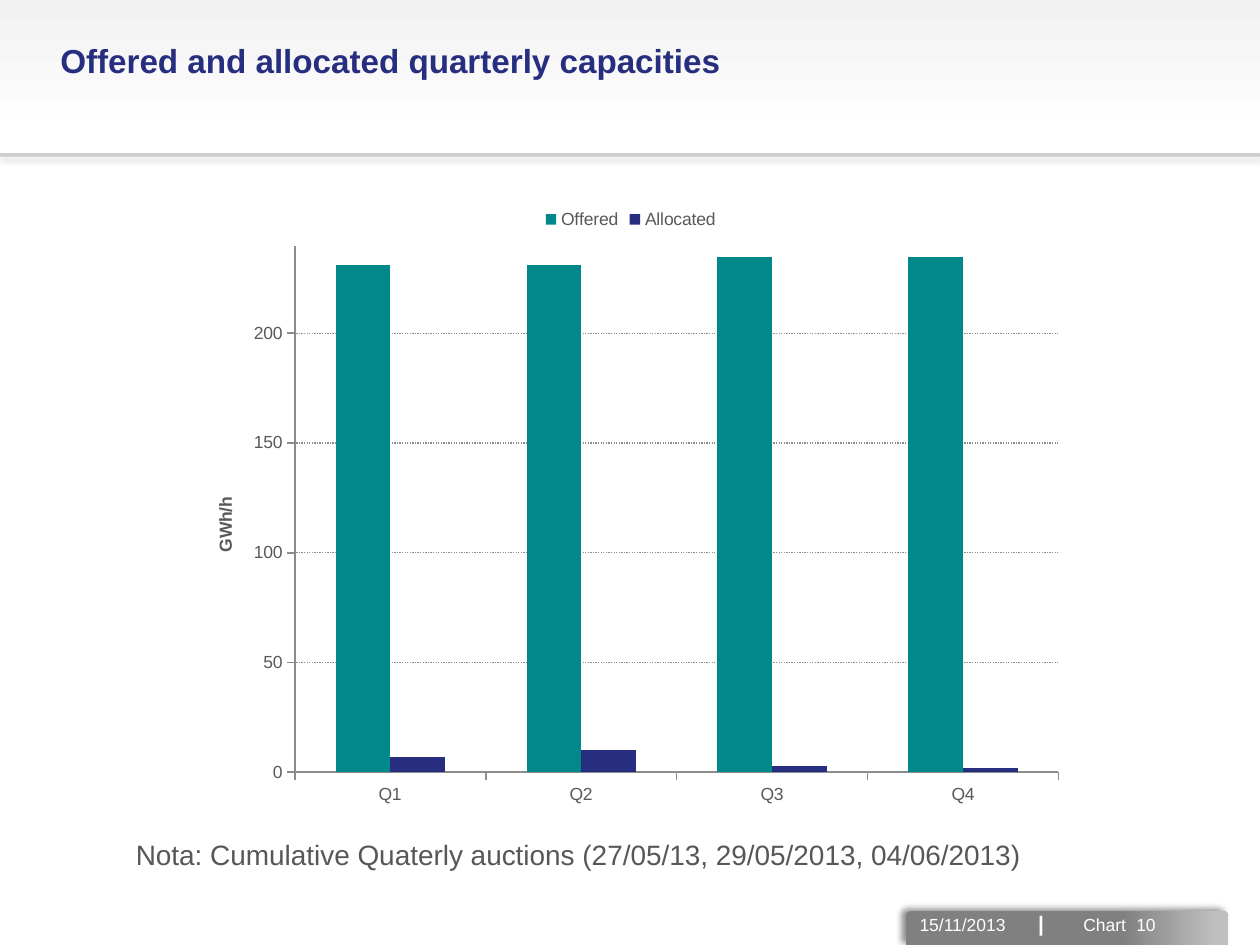
import pptx
import pptx.chart.data
import pptx.dml.color
import pptx.enum.chart
import pptx.enum.dml
import pptx.enum.shapes
import pptx.enum.text
import pptx.oxml
import pptx.oxml.ns
import pptx.util

Inches = pptx.util.Inches
Pt = pptx.util.Pt
RGBColor = pptx.dml.color.RGBColor
XL = pptx.enum.chart

WHITE = RGBColor(0xFF, 0xFF, 0xFF)
PALE = RGBColor(0xF2, 0xF2, 0xF2)
SILVER = RGBColor(0xBF, 0xBF, 0xBF)
GRAY = RGBColor(0x80, 0x80, 0x80)
AXIS = RGBColor(0x8C, 0x8C, 0x8C)
LABEL = RGBColor(0x59, 0x59, 0x59)
NOTE = RGBColor(0x57, 0x57, 0x56)
NAVY = RGBColor(0x27, 0x2E, 0x80)
TEAL = RGBColor(0x00, 0x88, 0x8A)

TITLE_STYLE = {"name": "Arial", "size": Pt(19), "bold": True}
NOTE_STYLE = {"name": "Arial", "size": Pt(16), "bold": False}
CHART_STYLE = {"name": "Arial", "size": Pt(10), "bold": False}
FOOTER_STYLE = {"name": "Arial", "size": Pt(10), "bold": False}
DIVIDER_STYLE = {"name": "Arial", "size": Pt(12), "bold": True}


def set_font(font, style, color):
    for key, value in style.items():
        setattr(font, key, value)
    font.color.rgb = color


def xml(tag, attrs="", inner=""):
    ns = pptx.oxml.ns.nsdecls("a", "c")
    return pptx.oxml.parse_xml(f"<{tag} {ns} {attrs}>{inner}</{tag}>")


def set_gradient(fill, angle, stops):
    fill.gradient()
    fill.gradient_angle = angle
    for stop, (position, color) in zip(fill.gradient_stops, stops):
        stop.position = position
        stop.color.rgb = color


def add_shadow(shape, alpha, blur, distance, angle):
    color = f'<a:srgbClr val="000000"><a:alpha val="{alpha * 1000}"/></a:srgbClr>'
    attrs = (f'blurRad="{Pt(blur)}" dist="{Pt(distance)}" '
             f'dir="{angle * 60000}" rotWithShape="0"')
    outer = f"<a:outerShdw {attrs}>{color}</a:outerShdw>"
    shape._element.spPr.append(xml("a:effectLst", inner=outer))


def add_text(s, box, runs, color):
    tf = s.shapes.add_textbox(*map(Inches, box)).text_frame
    tf.word_wrap = True
    p = tf.paragraphs[0]
    for text, style in runs:
        r = p.add_run()
        r.text = text
        set_font(r.font, style, color)
    return tf


def add_header(s, box):
    left, top, width, height = box
    line = s.shapes.add_connector(
        pptx.enum.shapes.MSO_CONNECTOR.STRAIGHT, Inches(left),
        Inches(top + height), Inches(left + width), Inches(top + height))
    line.line.width = Pt(2)
    line.line.color.rgb = GRAY
    color = line.line._ln.find(".//" + pptx.oxml.ns.qn("a:srgbClr"))
    color.append(xml("a:alpha", 'val="34000"'))
    add_shadow(line, 35, 3.1, 1.8, 90)
    add_text(s, (left + 0.38, top + 0.27, 8.01, 0.88),
             [("Offered and allocated quarterly capacities", TITLE_STYLE)], NAVY)


def set_layout(parent, **fractions):
    inner = '<c:layoutTarget val="inner"/>' if "w" in fractions else ""
    inner += '<c:xMode val="edge"/><c:yMode val="edge"/>'
    inner += "".join(f'<c:{k} val="{v}"/>' for k, v in fractions.items())
    layout = xml("c:layout", inner=f"<c:manualLayout>{inner}</c:manualLayout>")
    old = parent.find(pptx.oxml.ns.qn("c:layout"))
    if old is not None:
        parent.remove(old)
    text = parent.find(pptx.oxml.ns.qn("c:tx"))
    parent.insert(0 if text is None else 1, layout)


def add_capacity_chart(s, box):
    data = pptx.chart.data.CategoryChartData()
    data.categories = ["Q1", "Q2", "Q3", "Q4"]
    data.add_series("Offered", (231, 231, 235, 235))
    data.add_series("Allocated", (7, 10, 3, 2))
    chart = s.shapes.add_chart(XL.XL_CHART_TYPE.COLUMN_CLUSTERED,
                               *map(Inches, box), data).chart
    set_font(chart.font, CHART_STYLE, LABEL)
    chart.has_title = False
    chart.has_legend = True
    chart.legend.position = XL.XL_LEGEND_POSITION.TOP
    chart.legend.include_in_layout = False

    plot = chart.plots[0]
    plot.gap_width = 150
    plot.overlap = 0
    plot.vary_by_categories = False
    for series, color in zip(plot.series, (TEAL, NAVY)):
        series.format.fill.solid()
        series.format.fill.fore_color.rgb = color

    values = chart.value_axis
    for axis in (chart.category_axis, values):
        axis.major_tick_mark = XL.XL_TICK_MARK.OUTSIDE
        axis.minor_tick_mark = XL.XL_TICK_MARK.NONE
        axis.format.line.color.rgb = AXIS
        axis.format.line.width = Pt(1)
    for key, value in {"minimum_scale": 0, "maximum_scale": 240,
                       "major_unit": 50}.items():
        setattr(values, key, value)
    values.tick_labels.number_format = "0"
    values.tick_labels.number_format_is_linked = False
    grid = values.major_gridlines.format.line
    grid.color.rgb = AXIS
    grid.width = Pt(0.75)
    grid.dash_style = pptx.enum.dml.MSO_LINE.ROUND_DOT
    tf = values.axis_title.text_frame
    tf.text = "GWh/h"
    tf._txBody.bodyPr.set("rot", "-5400000")
    tf._txBody.bodyPr.set("vert", "horz")
    set_font(tf.paragraphs[0].runs[0].font, {**CHART_STYLE, "bold": True}, LABEL)
    set_layout(values.axis_title._element, x=0.03, y=0.48)
    area = chart._chartSpace.chart.plotArea
    set_layout(area, x=0.124, y=0.081, w=0.855, h=0.846)


def add_note(s, box):
    add_text(s, box, [("Nota: Cumulative Quaterly auctions "
                       "(27/05/13, 29/05/2013, 04/06/2013)", NOTE_STYLE)], NOTE)


def add_footer(s, box):
    left, top, width, height = box
    tab = s.shapes.add_shape(
        pptx.enum.shapes.MSO_SHAPE.ROUND_2_SAME_RECTANGLE, *map(Inches, box))
    set_gradient(tab.fill, 0, [(0.67, GRAY), (0.96, SILVER)])
    tab.line.fill.background()
    add_shadow(tab, 43, 4, 3, 211)
    tf = add_text(s, (left + 0.01, top - 0.1, 2.33, 0.4),
                  [("15/11/2013\t", FOOTER_STYLE), ("|", DIVIDER_STYLE),
                   ("\tChart\t10", FOOTER_STYLE)], WHITE)
    tf.vertical_anchor = pptx.enum.text.MSO_ANCHOR.MIDDLE
    stops = "".join(f'<a:tab pos="{Inches(x)}" algn="l"/>'
                    for x in (0.94, 1.3, 1.72))
    tf.paragraphs[0]._p.get_or_add_pPr().append(xml("a:tabLst", inner=stops))


def main():
    prs = pptx.Presentation()
    prs.slide_width, prs.slide_height = Inches(10), Inches(7.5)
    s = prs.slides.add_slide(prs.slide_layouts[6])
    set_gradient(s.background.fill, 90, [(0.85, WHITE), (1, PALE)])
    add_footer(s, (7.19, 7.23, 2.56, 0.27))
    add_header(s, (0, 0, 10, 1.23))
    add_note(s, (0.98, 6.6, 7.83, 0.54))
    add_capacity_chart(s, (1.46, 1.55, 7.09, 4.94))
    prs.save("out.pptx")


if __name__ == "__main__":
    main()
